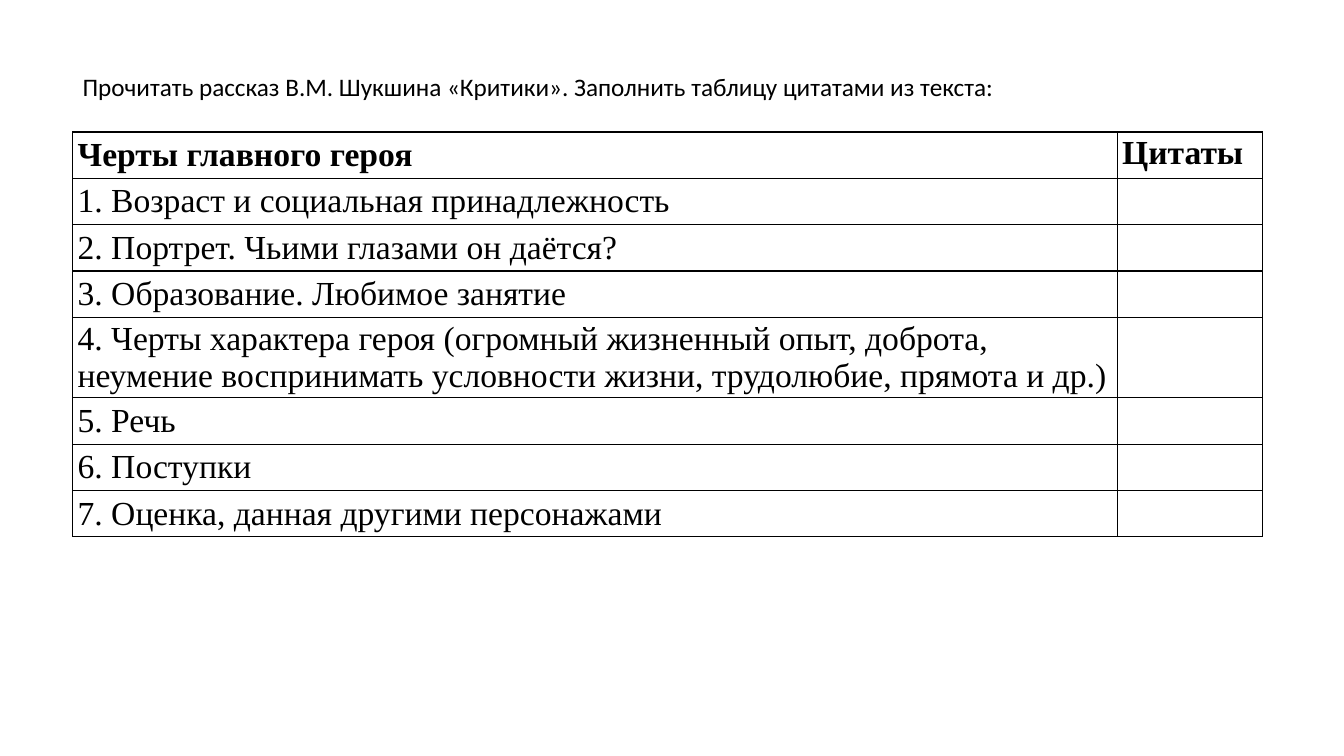
from lxml import etree
from pptx import Presentation
from pptx.dml.color import RGBColor
from pptx.enum.text import MSO_ANCHOR, MSO_AUTO_SIZE
from pptx.oxml.ns import qn
from pptx.util import Emu, Pt

TOP, MIDDLE = MSO_ANCHOR.TOP, MSO_ANCHOR.MIDDLE
GROW = MSO_AUTO_SIZE.SHAPE_TO_FIT_TEXT
SCALE = 9144  # EMU in one px, 100 px to the inch

TASK = "Прочитать рассказ В.М. Шукшина «Критики». Заполнить таблицу цитатами из текста:"
HEADS = ["Черты главного героя", "Цитаты"]
TRAITS = [
    "Возраст и социальная принадлежность",
    "Портрет. Чьими глазами он даётся?",
    "Образование. Любимое занятие",
    "Черты характера героя (огромный жизненный опыт, доброта, "
    "неумение воспринимать условности жизни, трудолюбие, прямота и др.)",
    "Речь",
    "Поступки",
    "Оценка, данная другими персонажами",
]
WIDTHS = [1036, 144]
LINE, DOUBLE = 46, 73  # heights of rows with one and two lines
LONG = 4  # row whose text takes two lines


def px(n):
    return Emu(n * SCALE)


def color(code):
    return RGBColor.from_string(code)


class Page:
    ink, paper = "000000", "FFFFFF"
    sans, serif = "Calibri", "Times New Roman"

    def __init__(self, deck):
        self.slide = deck.slides.add_slide(deck.slide_layouts[6])

    def style(self, para, face, size, bold=False):
        font = para.font
        font.name, font.size, font.bold = face, Pt(size), bold
        font.color.rgb = color(self.ink)

    def text(self, words, x, y, w, h):
        frame = self.slide.shapes.add_textbox(px(x), px(y), px(w), px(h)).text_frame
        frame.word_wrap = False
        frame.auto_size = GROW
        frame.text = words
        self.style(frame.paragraphs[0], self.sans, 18)

    def border(self, cell):
        props = cell._tc.get_or_add_tcPr()
        for place, side in enumerate(("lnL", "lnR", "lnT", "lnB")):
            line = etree.Element(qn("a:" + side), w=str(Pt(1)))
            fill = etree.SubElement(line, qn("a:solidFill"))
            etree.SubElement(fill, qn("a:srgbClr"), val=self.ink)
            props.insert(place, line)

    def cell(self, cell, words, bold, anchor):
        cell.text = words
        cell.vertical_anchor = anchor
        cell.margin_left = cell.margin_right = px(5)
        cell.margin_top = cell.margin_bottom = px(3)
        cell.fill.solid()
        cell.fill.fore_color.rgb = color(self.paper)
        self.style(cell.text_frame.paragraphs[0], self.serif, 24, bold)
        self.border(cell)

    def table(self, rows, x, y, widths, heights):
        grid = self.slide.shapes.add_table(
            len(rows), len(widths), px(x), px(y), px(sum(widths)), px(sum(heights))
        ).table
        grid.first_row = grid.horz_banding = False
        for col, width in zip(grid.columns, widths):
            col.width = px(width)
        for r, (row, height) in enumerate(zip(rows, heights)):
            grid.rows[r].height = px(height)
            for c, words in enumerate(row):
                self.cell(grid.cell(r, c), words, r == 0, TOP if c else MIDDLE)


def main():
    deck = Presentation()
    deck.slide_width, deck.slide_height = px(1333), px(750)
    page = Page(deck)

    # Table of traits, with room for quotations
    rows = [HEADS] + [[f"{n}. {trait}", ""] for n, trait in enumerate(TRAITS, 1)]
    heights = [DOUBLE if r == LONG else LINE for r in range(len(rows))]
    page.table(rows, 72, 131, WIDTHS, heights)

    # Task above the table
    page.text(TASK, 72, 66, 929, 40)

    deck.save("out.pptx")


if __name__ == "__main__":
    main()
